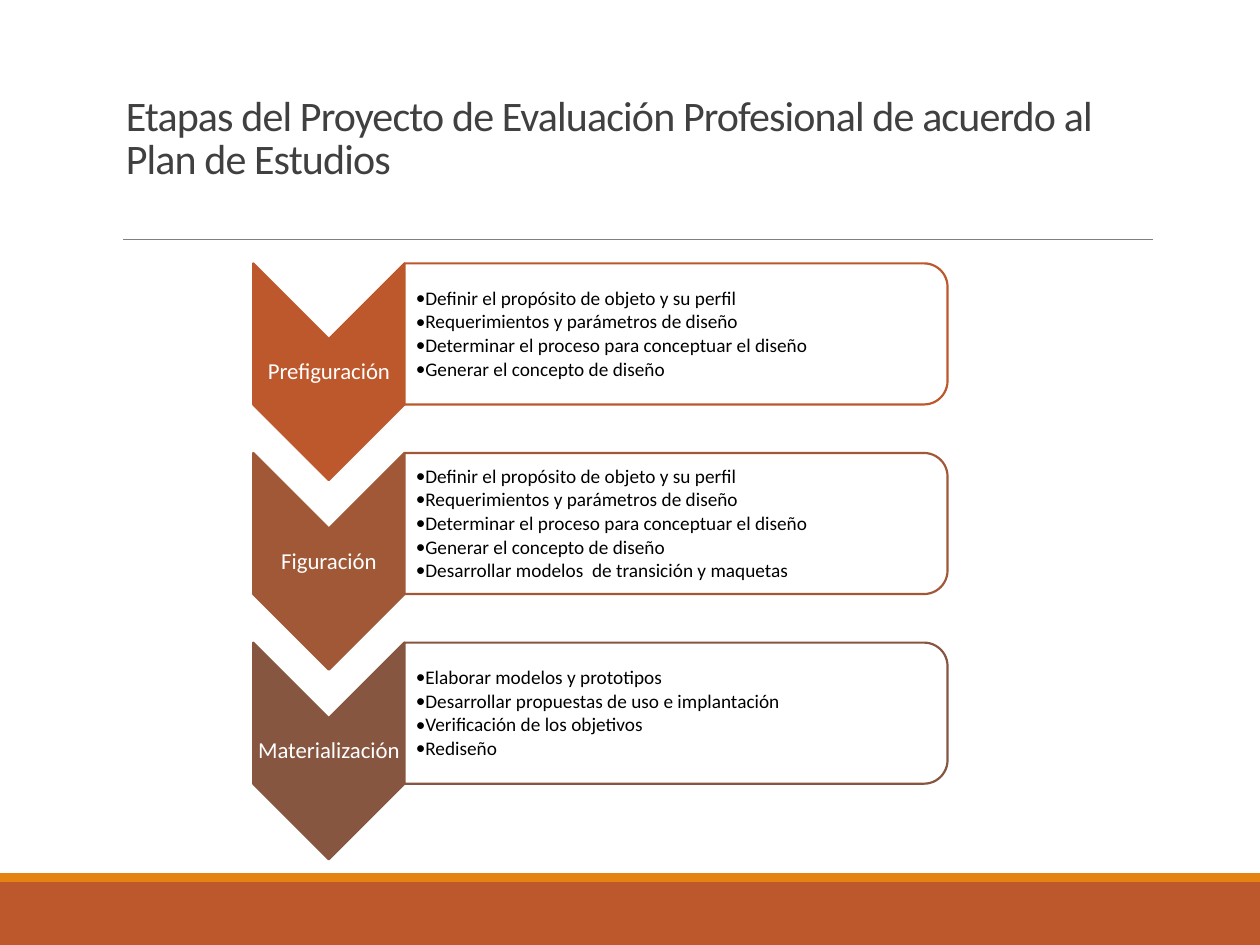
from pptx import Presentation
from pptx.dml.color import RGBColor
from pptx.enum.shapes import MSO_CONNECTOR, MSO_SHAPE as SHAPE
from pptx.enum.text import MSO_ANCHOR as ANCHOR, PP_ALIGN as ALIGN
from pptx.oxml.ns import qn
from pptx.util import Inches, Pt
from lxml.etree import SubElement

FONT = "Calibri"
RUST = RGBColor(0xBD, 0x58, 0x2C)
SIENNA = RGBColor(0xA0, 0x58, 0x37)
BROWN = RGBColor(0x86, 0x56, 0x40)
ORANGE = RGBColor(0xE4, 0x83, 0x12)
GRAY = RGBColor(0x80, 0x80, 0x80)
DARK = RGBColor(0x40, 0x40, 0x40)
WHITE = RGBColor(0xFF, 0xFF, 0xFF)
BLACK = RGBColor(0, 0, 0)

TITLE = "Etapas del Proyecto de Evaluación Profesional de acuerdo al Plan de Estudios"
CONCEPT = [
    "Definir el propósito de objeto y su perfil",
    "Requerimientos y parámetros de diseño",
    "Determinar el proceso para conceptuar el diseño",
    "Generar el concepto de diseño",
]
STAGES = [
    ("Prefiguración", RUST, CONCEPT),
    ("Figuración", SIENNA, CONCEPT + ["Desarrollar modelos  de transición y maquetas"]),
    ("Materialización", BROWN, [
        "Elaborar modelos y prototipos",
        "Desarrollar propuestas de uso e implantación",
        "Verificación de los objetivos",
        "Rediseño",
    ]),
]


def add_text(s, lines, x, y, w, h, size, color, anchor=ANCHOR.MIDDLE, align=ALIGN.LEFT,
             insets=(0.01, 0.01, 0.01, 0.01), line=0.9, after=0, bullet=False, spc=0):
    tf = s.shapes.add_textbox(Inches(x), Inches(y), Inches(w), Inches(h)).text_frame
    tf.word_wrap = True
    tf.vertical_anchor = anchor
    tf.margin_left, tf.margin_top, tf.margin_right, tf.margin_bottom = map(Inches, insets)
    for i, text in enumerate(lines):
        p = tf.paragraphs[0] if i == 0 else tf.add_paragraph()
        p.alignment, p.line_spacing, p.space_after = align, line, Pt(after)
        r = p.add_run()
        r.text = text
        r.font.name, r.font.size, r.font.color.rgb = FONT, Pt(size), color
        if spc:
            r.font._element.set("spc", str(spc))
        if bullet:
            pPr = p._p.get_or_add_pPr()
            pPr.set("marL", str(Inches(0.06)))
            pPr.set("indent", str(Inches(-0.06)))
            SubElement(pPr, qn("a:buFont")).set("typeface", FONT)
            SubElement(pPr, qn("a:buChar")).set("char", "•")


def add_box(s, kind, x, y, w, h, fill, line=None, turned=False):
    if turned:
        x, y, w, h = x + (w - h) / 2, y + (h - w) / 2, h, w
    sp = s.shapes.add_shape(kind, Inches(x), Inches(y), Inches(w), Inches(h))
    sp.shadow.inherit = False
    sp.fill.solid()
    sp.fill.fore_color.rgb = fill
    if turned:
        sp.rotation = 90
    if line is None:
        sp.line.fill.background()
    else:
        sp.line.color.rgb = line
        sp.line.width = Pt(1.25)


def add_header(s, x, y, w, h):
    add_text(s, [TITLE], x, y, w, h, 24, DARK, anchor=ANCHOR.BOTTOM,
             insets=(0.1, 0.05, 0.1, 0.45), line=0.85, spc=-50)
    rule = s.shapes.add_connector(MSO_CONNECTOR.STRAIGHT, Inches(x + 0.08), Inches(y + h),
                                  Inches(x + w), Inches(y + h))
    rule.line.color.rgb = GRAY
    rule.line.width = Pt(0.5)
    SubElement(rule._element.spPr, qn("a:effectLst"))


def add_footer(s, y, w, h):
    add_box(s, SHAPE.RECTANGLE, 0, y, w, h, RUST)
    add_box(s, SHAPE.RECTANGLE, 0, y - 0.07, w, 0.07, ORANGE)


def add_stage(s, x, y, w, h, name, color, items):
    arrow_w, body_h = 1.2, 1.12
    body_x, body_w = x + arrow_w, w - arrow_w
    add_box(s, SHAPE.CHEVRON, x, y, arrow_w, h, color, color, turned=True)
    add_text(s, [name], x, y + 0.61, arrow_w, 0.51, 13, WHITE, align=ALIGN.CENTER)
    add_box(s, SHAPE.ROUND_2_SAME_RECTANGLE, body_x, y, body_w, body_h, WHITE, color, turned=True)
    add_text(s, items, body_x, y + 0.06, body_w - 0.05, 1.01, 11, BLACK,
             insets=(0.09, 0.01, 0.01, 0.01), after=1.65, bullet=True)


def main():
    prs = Presentation()
    prs.slide_width, prs.slide_height = Inches(10), Inches(7.5)
    s = prs.slides.add_slide(prs.slide_layouts[6])
    add_footer(s, 7, 10, 0.5)
    top, bottom = 2.09, 5.1
    pitch = (bottom - top) / (len(STAGES) - 1)
    for i, stage in enumerate(STAGES):
        add_stage(s, 2.01, top + pitch * i, 5.51, 1.72, *stage)
    add_header(s, 0.9, 0.31, 8.25, 1.59)
    prs.save("out.pptx")


if __name__ == "__main__":
    main()
